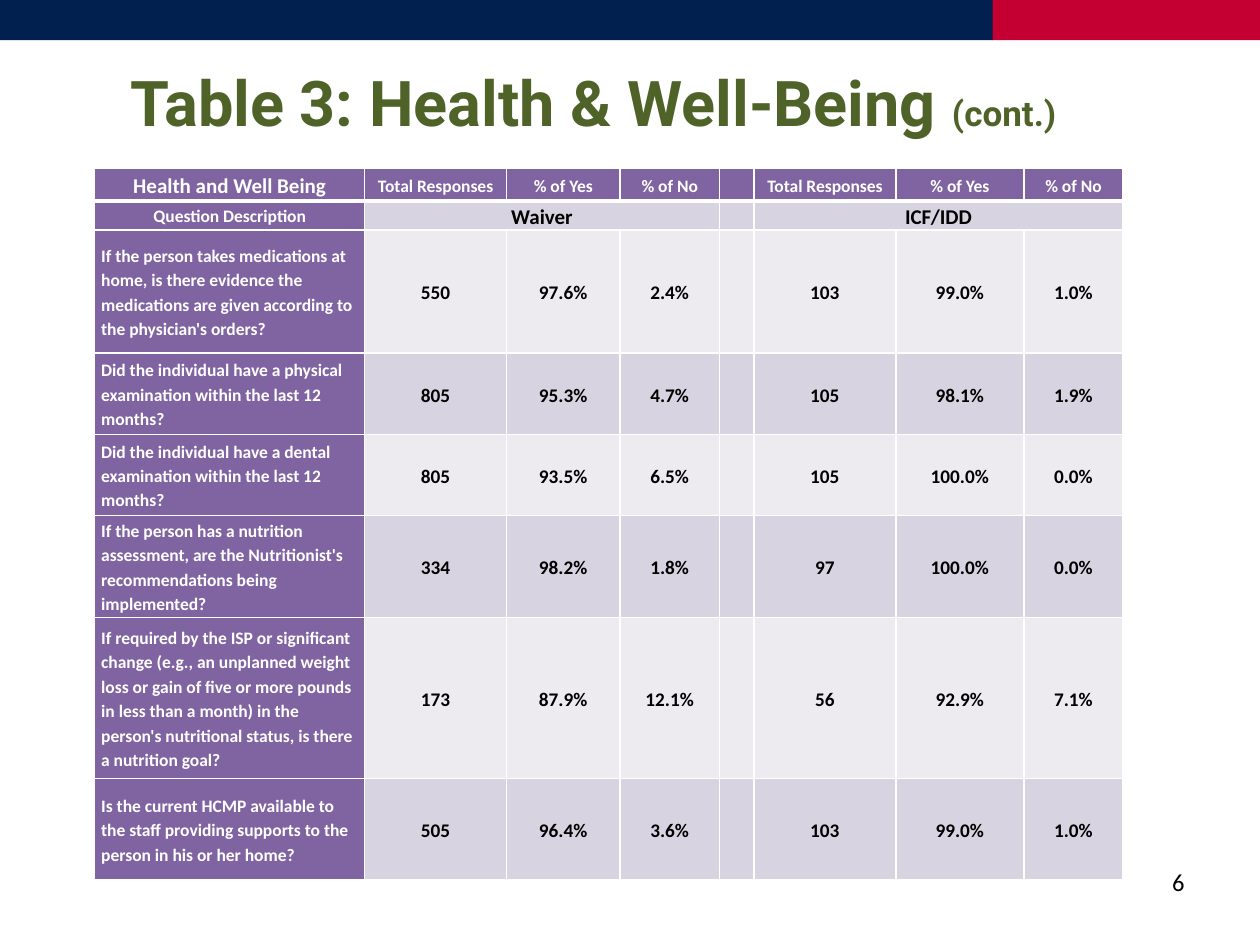
"""Build the Health & Well-Being survey table slide."""
from lxml.etree import SubElement
from pptx import Presentation
from pptx.dml.color import RGBColor
from pptx.enum.shapes import MSO_SHAPE
from pptx.enum.text import MSO_ANCHOR, PP_ALIGN
from pptx.oxml.ns import qn
from pptx.util import Cm, Pt

NAVY = RGBColor(0x01, 0x1F, 0x4F)
RED = RGBColor(0xC4, 0x00, 0x33)
GREEN = RGBColor(0x4F, 0x62, 0x28)
PURPLE = RGBColor(0x80, 0x64, 0xA2)
LILAC = RGBColor(0xD8, 0xD3, 0xE0)
PALE = RGBColor(0xED, 0xEA, 0xF0)
WHITE = RGBColor(0xFF, 0xFF, 0xFF)
BLACK = RGBColor(0x00, 0x00, 0x00)

TITLE_RUNS = [("Table 3: Health & Well-Being ", 36), ("(cont.)", 20)]
BANDS = [(20, 5.4, RED), (0, 20.01, NAVY)]
MEASURES = ["Total Responses", "% of Yes", "% of No"]
ROWS = [
    ["Health and Well Being", *MEASURES, "", *MEASURES],
    ["Question Description", "Waiver", "", "", "", "ICF/IDD", "", ""],
    ["If the person takes medications at home, is there evidence the medications "
     "are given according to the physician's orders?",
     "550", "97.6%", "2.4%", "", "103", "99.0%", "1.0%"],
    ["Did the individual have a physical examination within the last 12 months?",
     "805", "95.3%", "4.7%", "", "105", "98.1%", "1.9%"],
    ["Did the individual have a dental examination within the last 12 months?",
     "805", "93.5%", "6.5%", "", "105", "100.0%", "0.0%"],
    ["If the person has a nutrition assessment, are the Nutritionist's "
     "recommendations being implemented?",
     "334", "98.2%", "1.8%", "", "97", "100.0%", "0.0%"],
    ["If required by the ISP or significant change (e.g., an unplanned weight loss "
     "or gain of five or more pounds in less than a month) in the person's "
     "nutritional status, is there a nutrition goal?",
     "173", "87.9%", "12.1%", "", "56", "92.9%", "7.1%"],
    ["Is the current HCMP available to the staff providing supports to the person "
     "in his or her home?",
     "505", "96.4%", "3.6%", "", "103", "99.0%", "1.0%"],
]
COLUMN_WIDTHS = [5.44, 2.86, 2.29, 2, 0.7, 2.86, 2.58, 2]
ROW_HEIGHTS = [0.66, 0.55, 2.48, 1.64, 1.64, 2.05, 3.25, 2.05]
GROUP_COLUMNS = [1, 5]


def add_run(paragraph, text, size, font_name, color, bold=False):
    run = paragraph.add_run()
    run.text = text
    run.font.size = Pt(size)
    run.font.name = font_name
    run.font.bold = bold
    run.font.color.rgb = color


def set_borders(cell, bottom_width):
    properties = cell._tc.get_or_add_tcPr()
    widths = {"a:lnL": 1, "a:lnR": 1, "a:lnT": 1, "a:lnB": bottom_width}
    for position, (tag, width) in enumerate(widths.items()):
        line = SubElement(properties, qn(tag), w=str(Pt(width)))
        fill = SubElement(line, qn("a:solidFill"))
        SubElement(fill, qn("a:srgbClr"), val=str(WHITE))
        properties.insert(position, line)


def format_cell(cell, row, column, text):
    is_data = row > 1 and column > 0
    is_heading = row == 0 or column == 0
    cell.fill.solid()
    cell.fill.fore_color.rgb = PURPLE if is_heading else LILAC if row % 2 else PALE
    set_borders(cell, 3 if row == 0 else 1)
    cell.vertical_anchor = MSO_ANCHOR.MIDDLE
    cell.margin_left = cell.margin_right = Cm(0.18 if is_data else 0.13)
    cell.margin_top = cell.margin_bottom = 0
    paragraph = cell.text_frame.paragraphs[0]
    if not text:
        SubElement(paragraph._p, qn("a:endParaRPr"), sz="1000")
        return
    paragraph.alignment = PP_ALIGN.LEFT if row > 1 and column == 0 else PP_ALIGN.CENTER
    paragraph.line_spacing = 1.15
    if is_data:
        paragraph.space_after = Pt(10)
    is_large = (row, column) == (0, 0) or (row == 1 and column > 0)
    size = 11 if is_data else 12 if is_large else 10
    add_run(paragraph, text, size, "Calibri", WHITE if is_heading else BLACK, True)


def add_bands(slide):
    for left, width, color in BANDS:
        band = slide.shapes.add_shape(
            MSO_SHAPE.RECTANGLE, Cm(left), 0, Cm(width), Cm(0.81))
        band.shadow.inherit = False
        band.fill.solid()
        band.fill.fore_color.rgb = color
        band.line.fill.background()


def fill_title(title):
    title.left, title.top, title.width, title.height = Cm(1.27), Cm(1.07), Cm(21.39), Cm(1.9)
    frame = title.text_frame
    frame.word_wrap = True
    frame.vertical_anchor = MSO_ANCHOR.TOP
    frame.margin_left = frame.margin_right = frame.margin_top = frame.margin_bottom = 0
    paragraph = frame.paragraphs[0]
    paragraph.alignment = PP_ALIGN.CENTER
    paragraph.line_spacing = Pt(49)
    for text, size in TITLE_RUNS:
        add_run(paragraph, text, size, "Roboto", GREEN, True)


def add_page_number(slide):
    box = slide.shapes.add_textbox(Cm(18.2), Cm(17.36), Cm(5.93), Cm(1.27))
    box.text_frame.word_wrap = True
    paragraph = box.text_frame.paragraphs[0]
    paragraph.alignment = PP_ALIGN.RIGHT
    add_run(paragraph, "6", 14, "Calibri", BLACK)


def add_results_table(slide):
    table = slide.shapes.add_table(
        len(ROWS), len(COLUMN_WIDTHS), Cm(1.91), Cm(3.39),
        Cm(sum(COLUMN_WIDTHS)), Cm(sum(ROW_HEIGHTS))).table
    for column, width in zip(table.columns, COLUMN_WIDTHS):
        column.width = Cm(width)
    for row, height in zip(table.rows, ROW_HEIGHTS):
        row.height = Cm(height)
    for row, texts in enumerate(ROWS):
        for column, text in enumerate(texts):
            format_cell(table.cell(row, column), row, column, text)
    for column in GROUP_COLUMNS:
        table.cell(1, column).merge(table.cell(1, column + len(MEASURES) - 1))


def main():
    presentation = Presentation()
    presentation.slide_width, presentation.slide_height = Cm(25.4), Cm(19.05)
    slide = presentation.slides.add_slide(presentation.slide_layouts[5])
    add_bands(slide)
    fill_title(slide.shapes.title)
    add_page_number(slide)
    add_results_table(slide)
    presentation.save("out.pptx")


if __name__ == "__main__":
    main()
